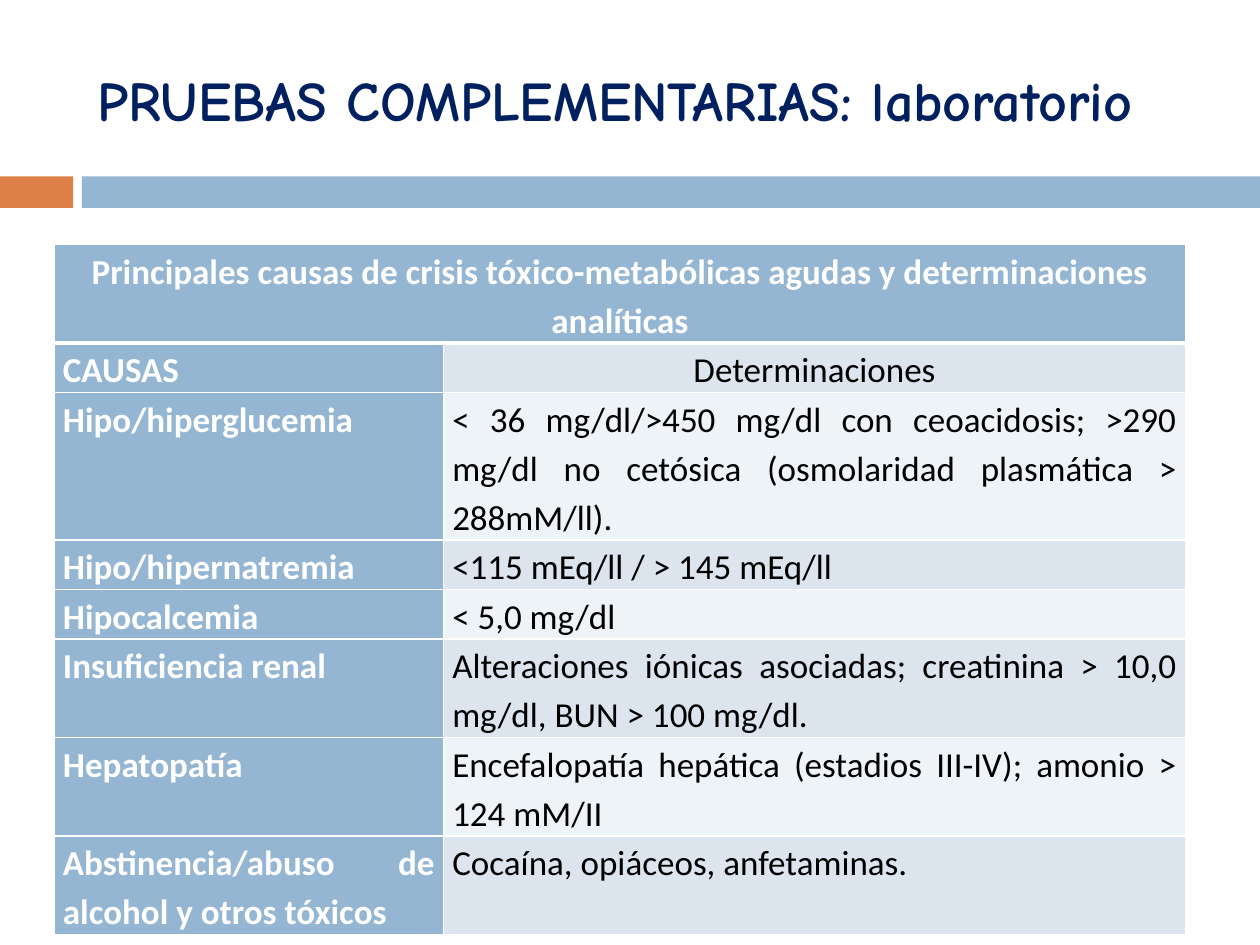
from lxml import etree
from pptx import Presentation
from pptx.dml.color import RGBColor
from pptx.enum.shapes import MSO_SHAPE
from pptx.enum.text import MSO_ANCHOR, PP_ALIGN
from pptx.oxml.ns import qn
from pptx.util import Inches, Pt

RECT = MSO_SHAPE.RECTANGLE
MIDDLE = MSO_ANCHOR.MIDDLE
LEFT, CENTER, JUSTIFY = PP_ALIGN.LEFT, PP_ALIGN.CENTER, PP_ALIGN.JUSTIFY

BLUE, ORANGE, NAVY = "94B6D2", "DD8047", "002060"
WHITE, BLACK = "FFFFFF", "000000"
BANDS = ["EEF3F7", "DCE5EE"]
LINE_HEIGHT = 0.39


def rgb(color):
    return RGBColor.from_string(color)


def set_borders(cell, color, widths):
    """Draw the cell's borders; widths maps each side (L, R, T, B) to points."""
    tcPr = cell._tc.get_or_add_tcPr()
    for i, (side, width) in enumerate(widths.items()):
        ln = etree.Element(qn(f"a:ln{side}"), w=str(Pt(width)))
        fill = etree.SubElement(ln, qn("a:solidFill"))
        etree.SubElement(fill, qn("a:srgbClr"), val=color)
        tcPr.insert(i, ln)


prs = Presentation()
prs.slide_width, prs.slide_height = Inches(10), Inches(7.5)
s = prs.slides.add_slide(prs.slide_layouts[5])

# Band under the title
for left, width, color in [(0, 0.58, ORANGE), (0.65, 9.35, BLUE)]:
    sp = s.shapes.add_shape(RECT, Inches(left), Inches(1.4), Inches(width), Inches(0.25))
    sp.shadow.inherit = False
    sp.fill.solid()
    sp.fill.fore_color.rgb = rgb(color)
    sp.line.fill.background()

# Title
title = s.shapes.title
title.left, title.top = Inches(0.67), Inches(0.25)
title.width, title.height = Inches(8.92), Inches(1.08)
tf = title.text_frame
tf.text = "PRUEBAS COMPLEMENTARIAS: laboratorio"
tf.vertical_anchor = MIDDLE
p = tf.paragraphs[0]
p.alignment = LEFT
p.font.name, p.font.size, p.font.bold = "Comic Neue", Pt(32), True
p.font.color.rgb = rgb(NAVY)

# Table: cause, determination, lines of text in the row
rows = [
    ("Principales causas de crisis tóxico-metabólicas agudas y determinaciones analíticas", "", 2),
    ("CAUSAS", "Determinaciones", 1),
    ("Hipo/hiperglucemia",
     "< 36 mg/dl/>450 mg/dl con ceoacidosis; >290 mg/dl no cetósica "
     "(osmolaridad plasmática > 288mM/ll).", 3),
    ("Hipo/hipernatremia", "<115 mEq/ll / > 145 mEq/ll", 1),
    ("Hipocalcemia", "< 5,0 mg/dl", 1),
    ("Insuficiencia renal",
     "Alteraciones iónicas asociadas; creatinina > 10,0 mg/dl, BUN > 100 mg/dl.", 2),
    ("Hepatopatía", "Encefalopatía hepática (estadios III-IV); amonio > 124 mM/II", 2),
    ("Abstinencia/abuso de alcohol y otros tóxicos", "Cocaína, opiáceos, anfetaminas.", 2),
]
total_lines = sum(lines for _, _, lines in rows)
table = s.shapes.add_table(len(rows), 2, Inches(0.43), Inches(1.94), Inches(8.98),
                           Inches(LINE_HEIGHT * total_lines)).table
table.columns[0].width, table.columns[1].width = Inches(3.09), Inches(5.89)
table.cell(0, 0).merge(table.cell(0, 1))

for i, (cause, determination, lines) in enumerate(rows):
    table.rows[i].height = Inches(LINE_HEIGHT * lines)
    for j, text in enumerate((cause, determination)):
        cell = table.cell(i, j)
        is_header = i == 0 or j == 0
        cell.margin_left = cell.margin_right = Inches(0.07)
        cell.margin_top = cell.margin_bottom = 0
        cell.fill.solid()
        cell.fill.fore_color.rgb = rgb(BLUE if is_header else BANDS[i % 2])
        set_borders(cell, WHITE, {"L": 1, "R": 1, "T": 3 if i == 1 else 1, "B": 3 if i == 0 else 1})
        cell.text = text
        p = cell.text_frame.paragraphs[0]
        p.alignment = CENTER if i == 0 or (i, j) == (1, 1) else JUSTIFY
        p.line_spacing = 1.15
        p.font.name, p.font.size, p.font.bold = "Calibri", Pt(20), is_header
        p.font.color.rgb = rgb(WHITE if is_header else BLACK)

prs.save("out.pptx")
